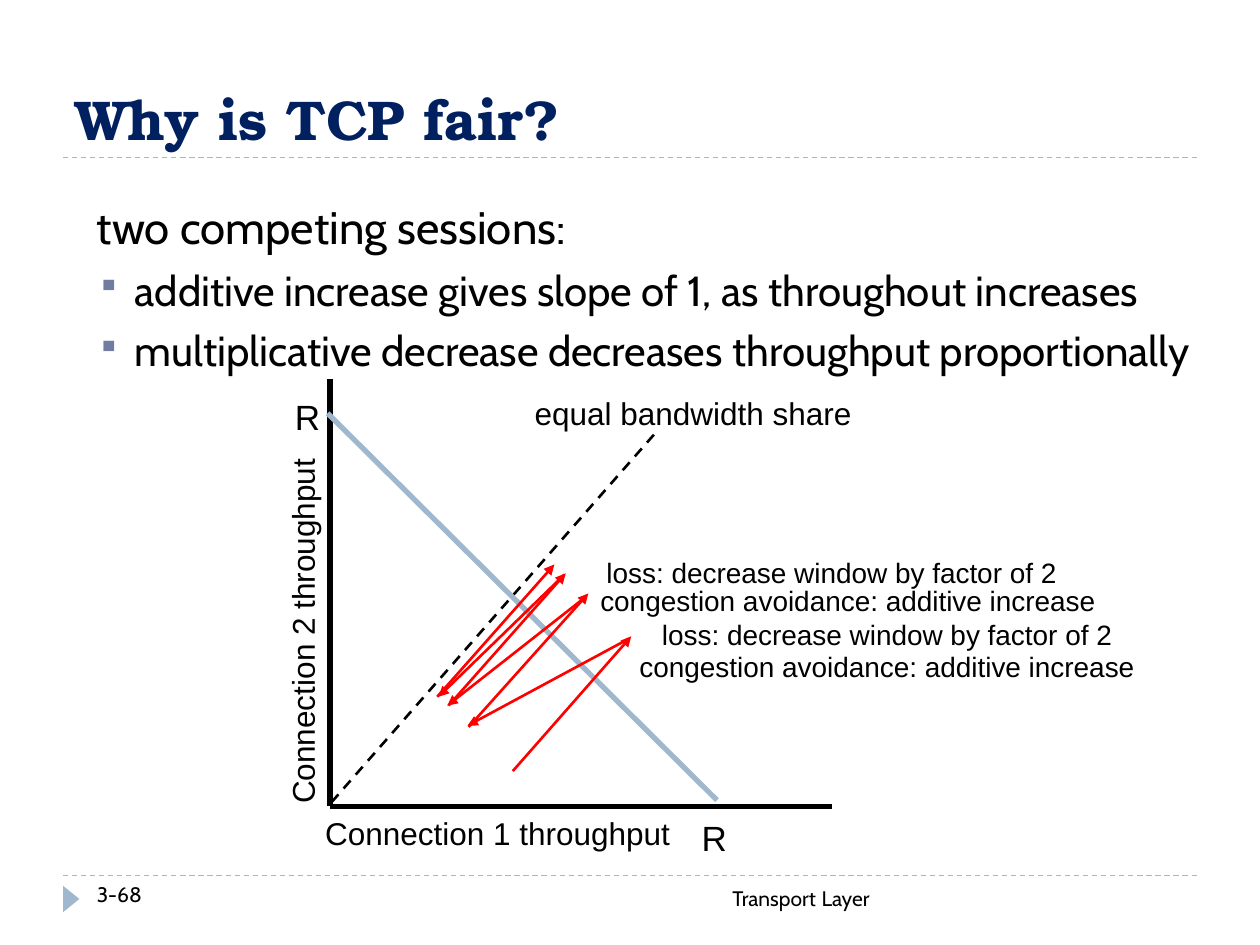
from lxml import etree
from pptx import Presentation
from pptx.dml.color import RGBColor
from pptx.enum import dml, shapes, text
from pptx.oxml.ns import qn
from pptx.util import Inches, Pt

BLACK = RGBColor(0x00, 0x00, 0x00)
NAVY = RGBColor(0x00, 0x20, 0x60)
STEEL = RGBColor(0x9F, 0xB8, 0xCD)
RED = RGBColor(0xFF, 0x00, 0x00)
BULLET = "727CA3"
BODY_FONT = "Cabin"
LEFT, CENTER, RIGHT = text.PP_ALIGN.LEFT, text.PP_ALIGN.CENTER, text.PP_ALIGN.RIGHT


def add_run(paragraph, words, size, font, color=BLACK, bold=False):
    run = paragraph.add_run()
    run.text = words
    run.font.size = Pt(size)
    run.font.name = font
    run.font.bold = bold
    run.font.color.rgb = color


def add_text(slide, box, runs, font=BODY_FONT, align=LEFT,
             anchor=text.MSO_ANCHOR.TOP, rotation=0, **style):
    label = slide.shapes.add_textbox(*map(Inches, box))
    label.rotation = rotation
    frame = label.text_frame
    frame.word_wrap = True
    frame.vertical_anchor = anchor
    paragraph = frame.paragraphs[0]
    paragraph.alignment = align
    for words, size in runs:
        add_run(paragraph, words, size, font, **style)
    return frame


def add_line(slide, start, end, color, width, dashed=False, arrow=False):
    line = slide.shapes.add_connector(
        shapes.MSO_CONNECTOR.STRAIGHT, *map(Inches, (*start, *end)))
    line.line.color.rgb = color
    line.line.width = Pt(width)
    if dashed:
        line.line.dash_style = dml.MSO_LINE.DASH
    if arrow:
        etree.SubElement(line.line._get_or_add_ln(), qn("a:tailEnd"), type="triangle")
    etree.SubElement(line._element.spPr, qn("a:effectLst"))


def add_bullet(paragraph):
    properties = paragraph._p.get_or_add_pPr()
    properties.set("marL", str(Inches(0.3)))
    properties.set("indent", str(-Inches(0.3)))
    color = etree.SubElement(properties, qn("a:buClr"))
    etree.SubElement(color, qn("a:srgbClr"), val=BULLET)
    etree.SubElement(properties, qn("a:buSzPct"), val="76000")
    etree.SubElement(properties, qn("a:buChar"), char="▪")


def add_title(slide, left, top, width, height):
    add_text(slide, (left, top, width, height), [("Why is TCP fair?", 32)],
             font="TeX Gyre Bonum", anchor=text.MSO_ANCHOR.BOTTOM, color=NAVY, bold=True)
    add_line(slide, (left, top + height), (left + width, top + height),
             STEEL, 0.75, dashed=True)


def add_body(slide, left, top, width, height):
    frame = add_text(slide, (left, top, width, height), [("two competing sessions:", 26)])
    for point in ("additive increase gives slope of 1, as throughout increases",
                  "multiplicative decrease decreases throughput proportionally"):
        paragraph = frame.add_paragraph()
        paragraph.space_before = Pt(6)
        add_bullet(paragraph)
        add_run(paragraph, point, 24, BODY_FONT)


def add_plot(slide, left, top, width, height):
    def at(x, y):
        return left + x, top + y

    add_line(slide, at(0, height), at(width, height), BLACK, 3)
    add_line(slide, at(0, height), at(0, 0), BLACK, 3)
    add_line(slide, at(2.57, 0.44), at(0, 3.37), BLACK, 1.5, dashed=True)
    add_line(slide, at(-0.02, 0.27), at(3.07, 3.34), STEEL, 3)

    increase = "congestion avoidance: additive increase"
    loss = "loss: decrease window by factor of 2"
    labels = [
        ("R", 20, -0.4, 0.08, 0.44, 0.43, 0),
        ("R", 20, 2.83, 3.42, 0.44, 0.43, 0),
        ("equal bandwidth share", 18, 0.94, 0.07, 3.88, 0.4, 0),
        ("Connection 1 throughput", 18, -0.61, 3.4, 3.88, 0.4, 0),
        ("Connection 2 throughput", 18, -2.16, 1.8, 3.88, 0.4, 270),
        (increase, 16, 1.94, 2.1, 4.96, 0.37, 0),
        (loss, 16, 2.53, 1.84, 3.78, 0.37, 0),
        (increase, 16, 1.63, 1.57, 4.96, 0.37, 0),
        (loss, 16, 2.09, 1.35, 3.78, 0.37, 0),
    ]
    for words, size, x, y, label_width, label_height, rotation in labels:
        add_text(slide, (*at(x, y), label_width, label_height), [(words, size)],
                 font="Arial", align=CENTER, rotation=rotation)

    window_steps = [
        ((1.45, 3.11), (2.39, 2.04)),
        ((2.37, 2.06), (1.09, 2.75)),
        ((1.10, 2.76), (2.05, 1.70)),
        ((2.00, 1.75), (0.93, 2.59)),
        ((0.94, 2.59), (1.87, 1.54)),
        ((1.86, 1.55), (0.86, 2.52)),
        ((0.85, 2.52), (1.78, 1.47)),
    ]
    for start, end in window_steps:
        add_line(slide, at(*start), at(*end), RED, 1.5, arrow=True)


def add_footer(slide, left, top, width, height):
    add_line(slide, (left, top), (left + width, top), STEEL, 0.75, dashed=True)
    marker = slide.shapes.add_shape(
        shapes.MSO_SHAPE.ISOSCELES_TRIANGLE,
        *map(Inches, (left - 0.04, top + 0.12, 0.21, 0.13)))
    marker.rotation = 90
    marker.shadow.inherit = False
    marker.fill.solid()
    marker.fill.fore_color.rgb = STEEL
    marker.line.fill.background()
    add_text(slide, (left + 2.67, top, 3.83, height),
             [("Transport", 12), (" ", 14), ("Layer", 12)], align=RIGHT)
    add_text(slide, (left + 0.17, top, 2.17, height), [("3-68", 12)])


def main():
    deck = Presentation()
    deck.slide_width, deck.slide_height = Inches(10), Inches(7.5)
    slide = deck.slides.add_slide(deck.slide_layouts[6])
    add_title(slide, 0.5, 0.25, 9, 1)
    add_body(slide, 0.67, 1.53, 9.08, 5.08)
    add_plot(slide, 2.62, 3.01, 3.98, 3.39)
    add_footer(slide, 0.5, 6.95, 9, 0.4)
    deck.save("out.pptx")


if __name__ == "__main__":
    main()
